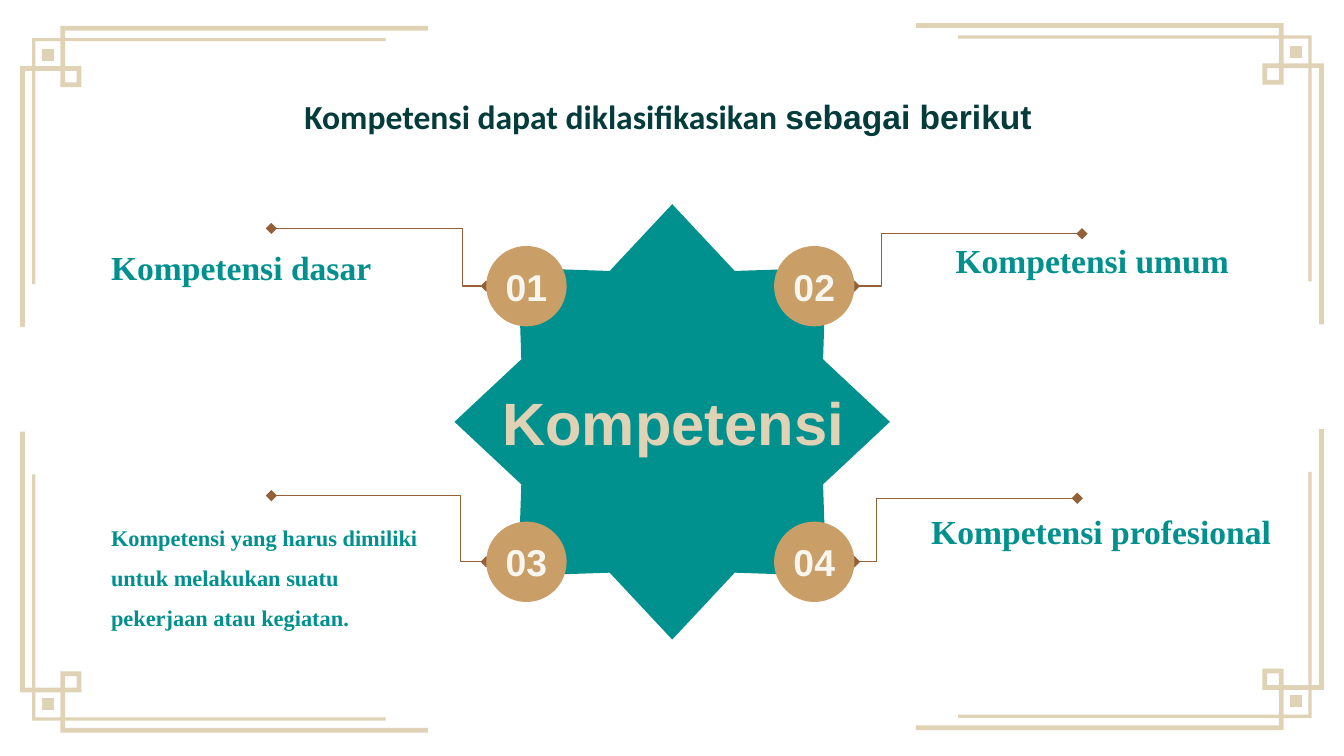
from lxml import etree
from pptx import Presentation
from pptx.dml.color import RGBColor
from pptx.enum.shapes import MSO_CONNECTOR, MSO_SHAPE
from pptx.enum.text import MSO_ANCHOR, MSO_AUTO_SIZE, PP_ALIGN
from pptx.oxml.ns import qn
from pptx.util import Cm, Pt

ELBOW = MSO_CONNECTOR.ELBOW
STAR, OVAL = MSO_SHAPE.STAR_8_POINT, MSO_SHAPE.OVAL
TOP, MIDDLE = MSO_ANCHOR.TOP, MSO_ANCHOR.MIDDLE
LEFT, CENTER, JUSTIFY = PP_ALIGN.LEFT, PP_ALIGN.CENTER, PP_ALIGN.JUSTIFY
NO_FIT = MSO_AUTO_SIZE.NONE

TEAL = RGBColor(0x00, 0x90, 0x8E)
DARK_TEAL = RGBColor(0x04, 0x3B, 0x3B)
SAND = RGBColor(0xE0, 0xD2, 0xB4)
GOLD = RGBColor(0xCA, 0x9E, 0x67)
BROWN = RGBColor(0x93, 0x60, 0x37)
CREAM = RGBColor(0xF8, 0xF6, 0xEF)


def box(x0, y0, x1, y1):
    return [(x0, y0), (x1, y0), (x1, y1), (x0, y1)]


# Each ornament part is a list of outlines, in cm from its slide corner.
ORNAMENT = [
    [[(0.23, 0.23), (0.23, 4.88), (0.29, 4.88), (0.29, 0.29), (6.91, 0.29), (6.91, 0.23)]],
    [[(0.76, 0), (0.76, 0.76), (0, 0.76), (0, 5.69), (0.09, 5.69), (0.09, 0.85),
      (0.85, 0.85), (0.85, 0.09), (7.71, 0.09), (7.71, 0)]],
    [box(0.76, 0.76, 1.16, 1.16), box(0.85, 0.85, 1.07, 1.07)[::-1]],
    [box(0.41, 0.43, 0.64, 0.66)],
]
# x, y, x direction, y direction
CORNERS = [(25.02, 0.44, -1, 1), (0.38, 0.49, 1, 1),
           (25.02, 13.8, -1, -1), (0.38, 13.85, 1, -1)]

BADGE = 1.52
# number, badge x, badge y, line end x, line end y, line bend
BADGES = [("01", 9.19, 4.65, 5.13, 4.32, 0.11), ("02", 14.63, 4.65, 20.45, 4.42, 0.12),
          ("03", 9.19, 9.86, 5.13, 9.37, 0.12), ("04", 14.63, 9.86, 20.36, 9.42, 0.1)]
# text, x, y, width, size, alignment
LABELS = [
    ("Kompetensi dasar", 1.85, 4.04, 6.3, 18, JUSTIFY),
    ("Kompetensi umum", 17.81, 3.91, 6.3, 18, JUSTIFY),
    ("Kompetensi yang harus dimiliki untuk melakukan suatu pekerjaan atau kegiatan.",
     1.85, 9.4, 6.5, 12, LEFT),
    ("Kompetensi profesional", 17.35, 9.02, 7.44, 18, JUSTIFY),
]


class Deck:
    def __init__(self, prs):
        self.s = prs.slides.add_slide(prs.slide_layouts[5])

    def set_text(self, sp, runs, size, color, align=CENTER, anchor=TOP, inset=0.25, **para):
        """Fill sp with one paragraph; runs are (text, font name) pairs."""
        tf = sp.text_frame
        frame = {"word_wrap": True, "auto_size": NO_FIT, "vertical_anchor": anchor}
        frame.update({f"margin_{side}": Cm(inset)
                      for side in ("left", "top", "right", "bottom")})
        for name, value in frame.items():
            setattr(tf, name, value)
        p = tf.paragraphs[0]
        for name, value in {"alignment": align, **para}.items():
            setattr(p, name, value)
        for text, font in runs:
            r = p.add_run()
            r.text = text
            for name, value in {"name": font, "size": Pt(size), "bold": True}.items():
                setattr(r.font, name, value)
            r.font.color.rgb = color

    def title(self, runs, x, y, w, h):
        sp = self.s.shapes.title
        sp.left, sp.top, sp.width, sp.height = Cm(x), Cm(y), Cm(w), Cm(h)
        self.set_text(sp, runs, 18, DARK_TEAL)

    def text(self, runs, x, y, w, h, size, color, **style):
        sp = self.s.shapes.add_textbox(Cm(x), Cm(y), Cm(w), Cm(h))
        self.set_text(sp, runs, size, color, **style)

    def paint(self, sp, color):
        sp.shadow.inherit = False
        sp.fill.solid()
        sp.fill.fore_color.rgb = color
        sp.line.fill.background()

    def shape(self, kind, x, y, size, color):
        sp = self.s.shapes.add_shape(kind, Cm(x), Cm(y), Cm(size), Cm(size))
        self.paint(sp, color)
        return sp

    def ornament(self, x, y, dx, dy):
        group = self.s.shapes.add_group_shape()
        for outlines in ORNAMENT:
            builder = None
            for outline in outlines:
                pts = [(Cm(x + dx * px), Cm(y + dy * py)) for px, py in outline]
                if builder is None:
                    builder = group.shapes.build_freeform(*pts[0])
                else:
                    builder.move_to(*pts[0])
                builder.add_line_segments(pts[1:], close=True)
            self.paint(builder.convert_to_shape(), SAND)

    def elbow(self, x0, y0, x1, y1, bend):
        """Bent line with diamond ends, turning at the fraction bend of its width."""
        line = self.s.shapes.add_connector(ELBOW, Cm(x0), Cm(y0), Cm(x1), Cm(y1))
        line.line.color.rgb = BROWN
        line.line.width = Pt(0.75)
        spPr = line._element.spPr
        guides = spPr.find(qn("a:prstGeom")).find(qn("a:avLst"))
        etree.SubElement(guides, qn("a:gd"), name="adj1", fmla=f"val {round(bend * 100000)}")
        for end in ("a:headEnd", "a:tailEnd"):
            etree.SubElement(spPr.find(qn("a:ln")), qn(end), type="diamond")
        etree.SubElement(spPr, qn("a:effectLst"))

    def badge(self, number, x, y):
        sp = self.shape(OVAL, x, y, BADGE, GOLD)
        self.set_text(sp, [(number, "Arial")], 20, CREAM, anchor=MIDDLE, inset=0)


def main():
    prs = Presentation()
    prs.slide_width, prs.slide_height = Cm(25.4), Cm(14.29)
    deck = Deck(prs)

    deck.title([("Kompetensi dapat diklasifikasikan ", "Calibri"),
                ("sebagai berikut ", "Arial")], 2.01, 1.57, 21.41, 1.85)
    for corner in CORNERS:
        deck.ornament(*corner)
    for text, x, y, w, size, align in LABELS:
        deck.text([(text, "Times New Roman")], x, y, w, 1.19, size, TEAL,
                  align=align, line_spacing=1.5, space_after=Pt(10))
    for _, x, y, end_x, end_y, bend in BADGES:
        edge = x if end_x < x else x + BADGE
        deck.elbow(edge, y + BADGE / 2, end_x, end_y, bend)

    deck.shape(STAR, 8.59, 3.86, 8.23, TEAL)
    deck.text([("Kompetensi", "Arial")], 8.74, 3.86, 7.98, 8.23, 32, SAND, anchor=MIDDLE)
    for number, x, y, *_ in BADGES:
        deck.badge(number, x, y)
    prs.save("out.pptx")


if __name__ == "__main__":
    main()
